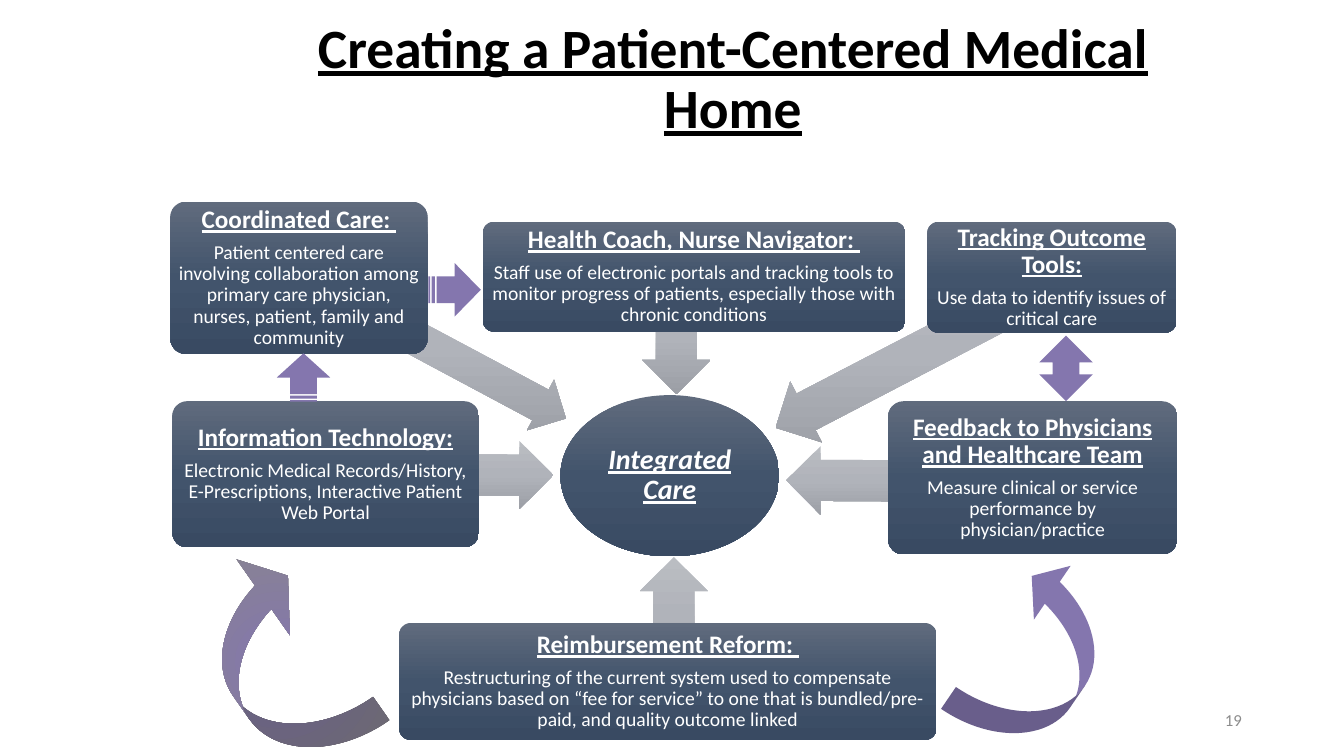
"""Build the slide on creating a patient-centered medical home."""
import pptx
import pptx.util
import pptx.dml.color
import pptx.enum.shapes
import pptx.enum.text
import pptx.oxml
import pptx.oxml.ns

RGBColor = pptx.dml.color.RGBColor
Shape = pptx.enum.shapes.MSO_SHAPE
Align = pptx.enum.text.PP_ALIGN
Anchor = pptx.enum.text.MSO_ANCHOR

BLACK = RGBColor(0x00, 0x00, 0x00)
WHITE = RGBColor(0xFF, 0xFF, 0xFF)
GREY = RGBColor(0x8C, 0x8C, 0x8C)
PURPLE = RGBColor(0x84, 0x76, 0xAE)
SLATE = [RGBColor(0x60, 0x6B, 0x7D), RGBColor(0x42, 0x54, 0x6C), RGBColor(0x39, 0x4A, 0x62)]
SILVER = [RGBColor(0xBA, 0xBD, 0xC2), RGBColor(0xB0, 0xB3, 0xBA), RGBColor(0x9C, 0x9F, 0xA6)]
FADED = [PURPLE, RGBColor(0x89, 0x88, 0x88)]
LINEAR = '<a:lin ang="5400000" scaled="0"/>'
RADIAL = '<a:path path="circle"><a:fillToRect l="50000" t="50000" r="50000" b="50000"/></a:path>'
WIDTH = pptx.util.Inches(13.33)
HEIGHT = pptx.util.Inches(7.5)


def place(left, top, width, height):
    """Turn percentages of the slide into lengths."""
    return [pptx.util.Emu(round(share * side / 100))
            for share, side in zip((left, top, width, height), (WIDTH, HEIGHT) * 2)]


def write(paragraph, text, size=14, color=WHITE, bold=False, italic=False,
          underline=False, align=Align.CENTER, after=0):
    """Write one formatted run into a paragraph."""
    paragraph.alignment = align
    paragraph.line_spacing = 0.9
    paragraph.space_before = pptx.util.Pt(0)
    paragraph.space_after = pptx.util.Pt(after)
    run = paragraph.add_run()
    run.text = text
    font = run.font
    font.name = "Calibri"
    font.size = pptx.util.Pt(size)
    font.color.rgb = color
    font.bold, font.italic, font.underline = bold, italic, underline


presentation = pptx.Presentation()
presentation.slide_width = WIDTH
presentation.slide_height = HEIGHT
slide = presentation.slides.add_slide(presentation.slide_layouts[5])

title = slide.shapes.title
title.left, title.top, title.width, title.height = place(22.58, 2.27, 63.9, 16.67)
title.text_frame.auto_size = pptx.enum.text.MSO_AUTO_SIZE.NONE
title.text_frame.vertical_anchor = Anchor.MIDDLE
write(title.text_frame.paragraphs[0], "Creating a Patient-Centered Medical Home",
      size=39.6, color=BLACK, bold=True, underline=True)

spokes = [
    ((20.93, 42.13, 22.5, 7.6), 208.1),
    ((24.68, 58.27, 16.5, 9.07), 180.2),
    ((46.13, 40.13, 8.4, 9.07), 270),
    ((45.75, 76.93, 8.78, 9.07), 90),
    ((56.4, 42.53, 23.18, 9.07), 332.5),
    ((58.5, 59.07, 17.85, 9.07), 0.3),
]
cards = [
    ((12.68, 26.67, 19.13, 20.13), "Coordinated Care: ",
     "Patient centered care involving collaboration among primary care physician, "
     "nurses, patient, family and community"),
    ((12.83, 53.07, 22.8, 19.33), "Information Technology:",
     "Electronic Medical Records/History, E-Prescriptions, Interactive Patient Web Portal"),
    ((35.93, 29.33, 31.43, 14.53), "Health Coach, Nurse Navigator: ",
     "Staff use of electronic portals and tracking tools to monitor progress of patients, "
     "especially those with chronic conditions"),
    ((29.7, 82.4, 39.98, 15.47), "Reimbursement Reform: ",
     "Restructuring of the current system used to compensate physicians based on "
     "“fee for service” to one that is bundled/pre-paid, and quality outcome linked"),
    ((69, 29.33, 18.53, 14.67), "Tracking Outcome Tools:",
     "Use data to identify issues of critical care"),
    ((66.08, 53.07, 21.53, 20.27), "Feedback to Physicians and Healthcare Team",
     "Measure clinical or service performance by physician/practice"),
]
heading = dict(size=18, bold=True, underline=True, after=6)
hub = dict(size=20, bold=True, italic=True, underline=True)

diagram = [(Shape.OVAL, (41.7, 52.27, 16.28, 21.33), 0, [], SLATE, LINEAR,
            [("Integrated Care", hub)])]
diagram += [(Shape.LEFT_ARROW, box, angle, [0.6, 0.5], SILVER, LINEAR, [])
            for box, angle in spokes]
diagram += [(Shape.ROUNDED_RECTANGLE, box, 0, [0.1], SLATE, LINEAR,
             [(name, heading), (detail, {})]) for box, name, detail in cards]
diagram += [
    (Shape.UP_DOWN_ARROW, (77.33, 44.4, 3.98, 8.67), 0, [], [PURPLE], None, []),
    (Shape.CURVED_UP_ARROW, (70.13, 80.13, 14.4, 14), 304.3, [0.25, 0.616, 0.25],
     [PURPLE], None, []),
    (Shape.CURVED_DOWN_ARROW, (12.45, 80, 16.58, 15.07), 234.9, [0.25, 0.812, 0.286],
     FADED, RADIAL, []),
    (Shape.STRIPED_RIGHT_ARROW, (20.78, 46.4, 3.6, 7.07), 270, [], [PURPLE], None, []),
    (Shape.STRIPED_RIGHT_ARROW, (31.88, 34.8, 3.9, 7.07), 0, [], [PURPLE], None, []),
]

for kind, box, angle, adjustments, colors, direction, texts in diagram:
    shape = slide.shapes.add_shape(kind, *place(*box))
    shape.rotation = angle
    shape.shadow.inherit = False
    shape.line.fill.background()
    for index, value in enumerate(adjustments):
        shape.adjustments[index] = value
    shape.fill.solid()
    shape.fill.fore_color.rgb = colors[0]
    if direction:
        stops = "".join(
            f'<a:gs pos="{100000 * index // (len(colors) - 1)}"><a:srgbClr val="{color}"/></a:gs>'
            for index, color in enumerate(colors))
        gradient = pptx.oxml.parse_xml(
            f'<a:gradFill {pptx.oxml.ns.nsdecls("a")} rotWithShape="0">'
            f'<a:gsLst>{stops}</a:gsLst>{direction}</a:gradFill>')
        solid = shape.element.spPr.find(pptx.oxml.ns.qn("a:solidFill"))
        shape.element.spPr.replace(solid, gradient)
    frame = shape.text_frame
    frame.word_wrap = True
    frame.vertical_anchor = Anchor.MIDDLE
    inset = pptx.util.Inches(0.01 if kind == Shape.OVAL else 0.04)
    frame.margin_left = frame.margin_top = frame.margin_right = frame.margin_bottom = inset
    for index, (text, style) in enumerate(texts):
        write(frame.add_paragraph() if index else frame.paragraphs[0], text, **style)

number = slide.shapes.add_textbox(*place(70.65, 92.67, 22.5, 5.33))
number.text_frame.word_wrap = True
number.text_frame.vertical_anchor = Anchor.MIDDLE
write(number.text_frame.paragraphs[0], "19", size=12, color=GREY, align=Align.RIGHT)

presentation.save("out.pptx")
